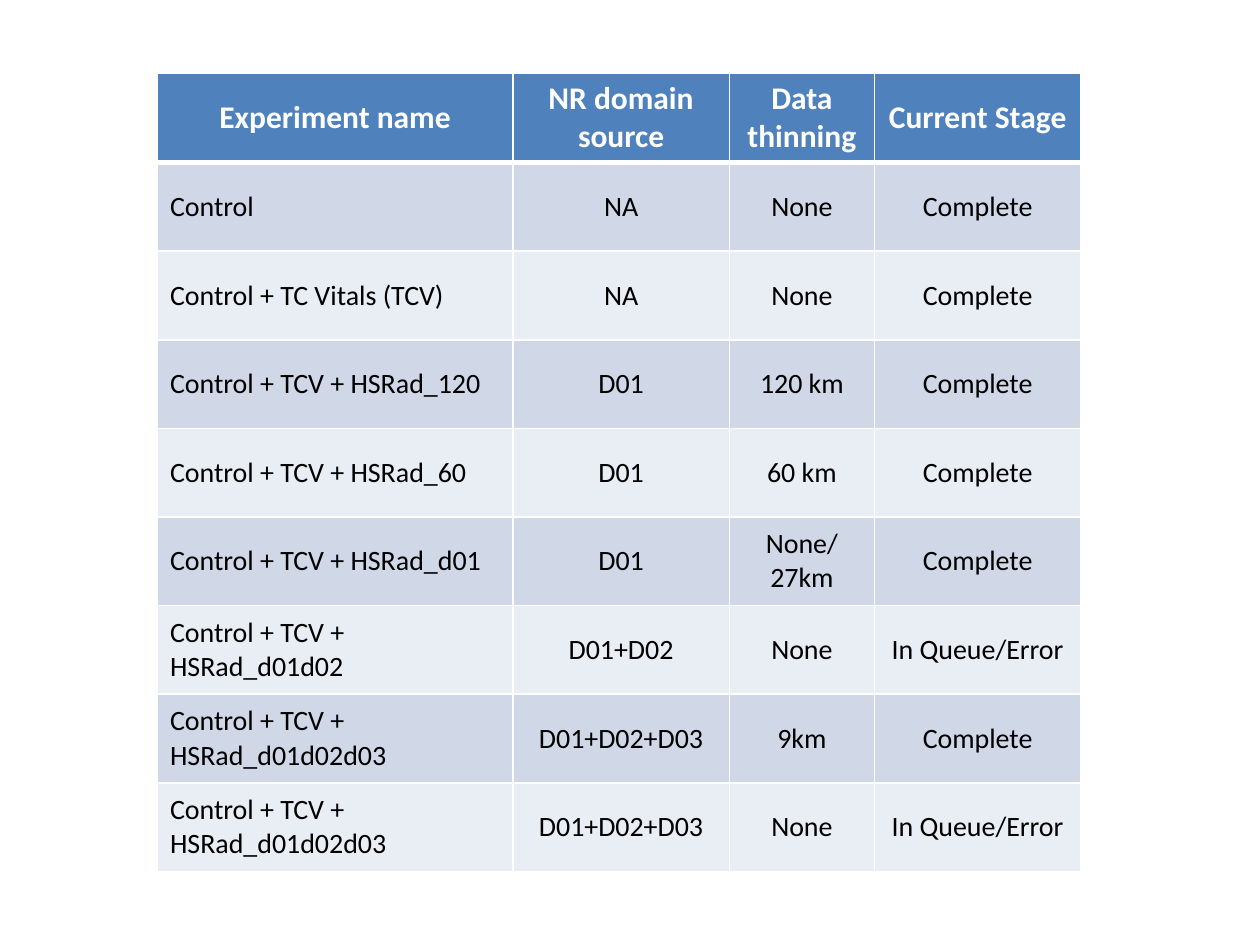
"""Build a slide with a table of experiments and their current stage."""
from lxml.etree import fromstring
from pptx import Presentation
from pptx.dml.color import RGBColor
from pptx.enum.text import MSO_ANCHOR, PP_ALIGN
from pptx.util import Inches, Pt

COLORS = {"head": "4F81BD", "odd": "D0D8E8", "even": "E9EDF4",
          "line": "FFFFFF", "light": "FFFFFF", "dark": "000000"}
NS = "http://schemas.openxmlformats.org/drawingml/2006/main"
ROWS = [
    ("Experiment name", "NR domain source", "Data thinning", "Current Stage"),
    ("Control", "NA", "None", "Complete"),
    ("Control + TC Vitals (TCV)", "NA", "None", "Complete"),
    ("Control + TCV + HSRad_120", "D01", "120 km", "Complete"),
    ("Control + TCV + HSRad_60", "D01", "60 km", "Complete"),
    ("Control + TCV + HSRad_d01", "D01", "None/27km", "Complete"),
    ("Control + TCV + HSRad_d01d02", "D01+D02", "None", "In Queue/Error"),
    ("Control + TCV + HSRad_d01d02d03", "D01+D02+D03", "9km", "Complete"),
    ("Control + TCV + HSRad_d01d02d03", "D01+D02+D03", "None", "In Queue/Error"),
]
WIDTHS = [2.82, 1.72, 1.15, 1.64]
HEIGHT = 6.33


def add_edge(cell, index, side, points):
    edge = fromstring(
        f'<a:{side} xmlns:a="{NS}" w="{Pt(points)}"><a:solidFill>'
        f'<a:srgbClr val="{COLORS["line"]}"/></a:solidFill></a:{side}>')
    cell._tc.get_or_add_tcPr().insert(index, edge)


deck = Presentation()
deck.slide_width, deck.slide_height = Inches(10), Inches(7.5)
slide = deck.slides.add_slide(deck.slide_layouts[6])
table = slide.shapes.add_table(
    len(ROWS), len(WIDTHS), Inches(1.25), Inches(0.58),
    Inches(sum(WIDTHS)), Inches(HEIGHT)).table

for column, width in zip(table.columns, WIDTHS):
    column.width = Inches(width)

for r, texts in enumerate(ROWS):
    table.rows[r].height = Inches(HEIGHT / len(ROWS))
    head = r == 0
    fill = "head" if head else "odd" if r % 2 else "even"
    for c, text in enumerate(texts):
        cell = table.cell(r, c)
        cell.fill.solid()
        cell.fill.fore_color.rgb = RGBColor.from_string(COLORS[fill])
        cell.vertical_anchor = MSO_ANCHOR.MIDDLE
        cell.text_frame.text = text
        para = cell.text_frame.paragraphs[0]
        para.alignment = PP_ALIGN.CENTER if head or c else PP_ALIGN.LEFT
        font = para.runs[0].font
        font.name, font.bold = "Calibri", head
        font.size = Pt(18 if head else 16)
        font.color.rgb = RGBColor.from_string(COLORS["light" if head else "dark"])
        edges = {"lnL": 1, "lnR": 1, "lnT": 3 if r == 1 else 1, "lnB": 3 if head else 1}
        for i, (side, points) in enumerate(edges.items()):
            add_edge(cell, i, side, points)

deck.save("out.pptx")
